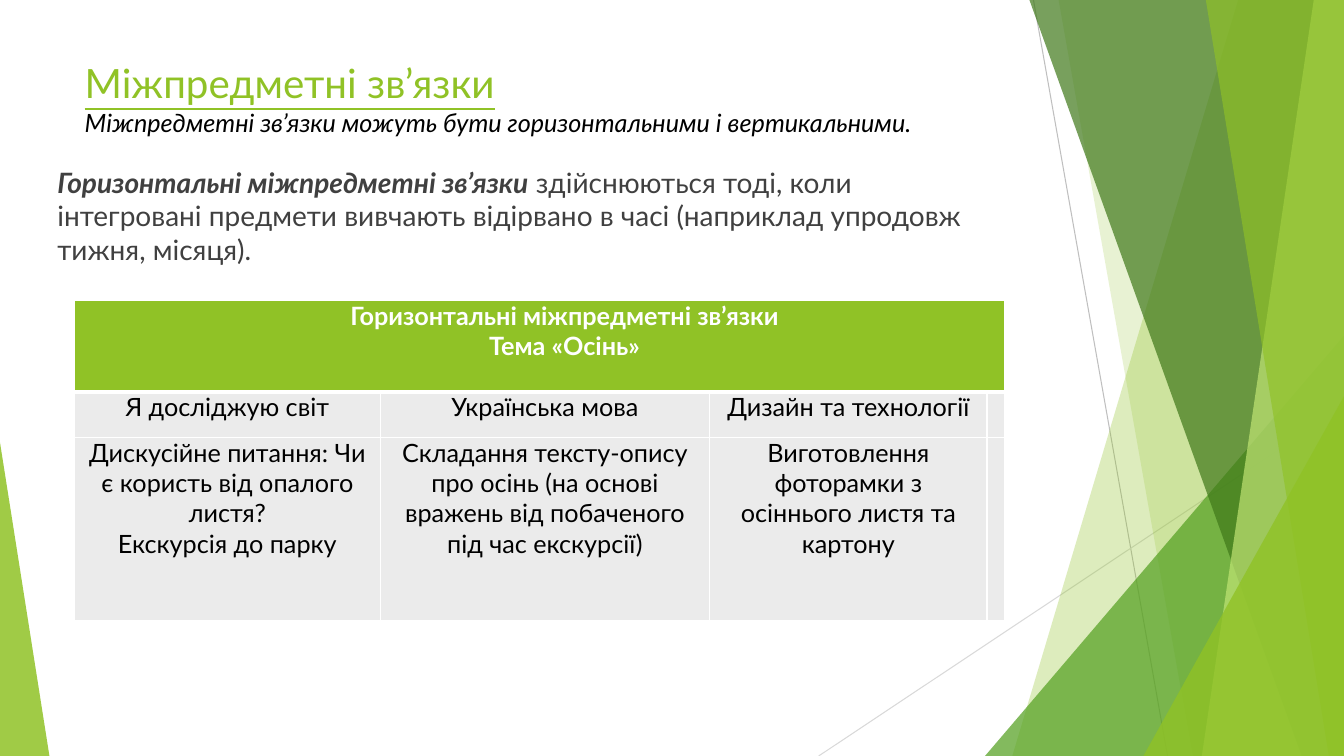
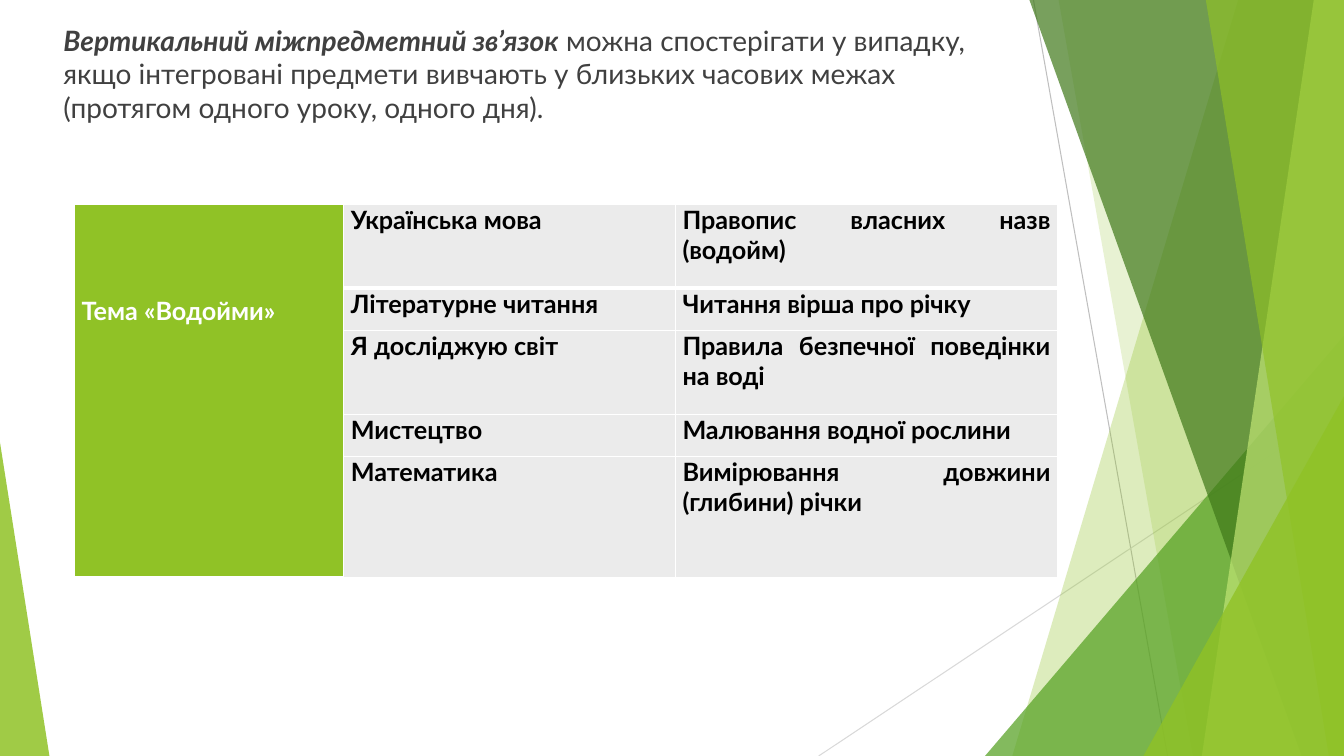
import dataclasses

import pptx
import pptx.dml.color
import pptx.enum.shapes
import pptx.enum.text
import pptx.oxml
import pptx.oxml.ns
import pptx.util

Inches = pptx.util.Inches
Pt = pptx.util.Pt
Align = pptx.enum.text.PP_ALIGN
qn = pptx.oxml.ns.qn


@dataclasses.dataclass(frozen=True)
class Theme:
    font: str = "Lato"
    lime: str = "90C226"
    green: str = "54A021"
    dark: str = "3F7819"
    pale: str = "C0E474"
    white: str = "FFFFFF"
    black: str = "000000"
    ink: str = "404040"
    cell: str = "EBEBEB"
    rule: str = "BFBFBF"
    faint: str = "D9D9D9"
    head: float = 28.8
    body: float = 20
    small: float = 18
    thin: float = 1
    thick: float = 3


class Deck:
    def __init__(self, theme):
        self.theme = theme
        self.file = pptx.Presentation()
        self.file.slide_width = Inches(13.33)
        self.file.slide_height = Inches(7.5)
        self.slide = None

    def start(self, titled):
        layout = self.file.slide_layouts[5 if titled else 6]
        self.slide = self.file.slides.add_slide(layout)
        self.decor()

    def color(self, code):
        return pptx.dml.color.RGBColor.from_string(code)

    def paint(self, shape, code, alpha):
        shape.shadow.inherit = False
        shape.fill.solid()
        shape.fill.fore_color.rgb = self.color(code)
        shape.line.fill.background()
        tint = shape.element.spPr.find(qn("a:solidFill")).find(qn("a:srgbClr"))
        tint.append(pptx.oxml.parse_xml(
            f'<a:alpha {pptx.oxml.ns.nsdecls("a")} val="{alpha * 1000}"/>'))

    def line(self, x1, y1, x2, y2, code):
        line = self.slide.shapes.add_connector(
            pptx.enum.shapes.MSO_CONNECTOR.STRAIGHT,
            Inches(x1), Inches(y1), Inches(x2), Inches(y2))
        line.line.color.rgb = self.color(code)
        line.line.width = Pt(0.75)
        line.element.spPr.append(pptx.oxml.parse_xml(
            f'<a:effectLst {pptx.oxml.ns.nsdecls("a")}/>'))

    def band(self, top, base, code, alpha):
        points = [(13.33, 0), (13.33, 7.5), (base, 7.5)]
        form = self.slide.shapes.build_freeform(Inches(top), Inches(0))
        form.add_line_segments([(Inches(x), Inches(y)) for x, y in points])
        self.paint(form.convert_to_shape(), code, alpha)

    def wedge(self, left, top, width, peak, code, alpha):
        shape = self.slide.shapes.add_shape(
            pptx.enum.shapes.MSO_SHAPE.ISOSCELES_TRIANGLE,
            Inches(left), Inches(top), Inches(width), Inches(7.5 - top))
        shape.adjustments[0] = peak
        self.paint(shape, code, alpha)

    def decor(self):
        t = self.theme
        self.line(10.25, 0, 11.58, 7.5, t.rule)
        self.line(13.33, 4.03, 8.12, 7.5, t.faint)
        self.band(12.28, 10.04, t.lime, 30)
        self.band(10.5, 11.83, t.lime, 20)
        self.wedge(9.77, 3.33, 3.56, 1, t.green, 72)
        self.band(10.21, 12.91, t.dark, 70)
        self.band(13.03, 11.92, t.pale, 70)
        self.band(11.96, 13.18, t.lime, 65)
        self.wedge(11.34, 3.93, 1.99, 1, t.lime, 80)
        self.wedge(0, 4.39, 0.49, 0, t.lime, 85)

    def run(self, para, text, size, code, bold=False, slant=False, under=False):
        run = para.add_run()
        run.text = text
        font = run.font
        font.name = self.theme.font
        font.size = Pt(size)
        font.bold = bold
        font.italic = slant
        font.underline = under
        font.color.rgb = self.color(code)

    def frame(self, shape):
        frame = shape.text_frame
        frame.word_wrap = True
        frame.auto_size = pptx.enum.text.MSO_AUTO_SIZE.NONE
        frame.vertical_anchor = pptx.enum.text.MSO_ANCHOR.TOP
        para = frame.paragraphs[0]
        para.alignment = Align.LEFT
        return para

    def title(self, text, sub):
        t = self.theme
        shape = self.slide.shapes.title
        shape.left, shape.top = Inches(0.74), Inches(0.53)
        shape.width, shape.height = Inches(9.4), Inches(0.97)
        para = self.frame(shape)
        self.run(para, text, t.head, t.lime, under=True)
        para.add_line_break()
        self.run(para, sub, t.small, t.black, slant=True)

    def body(self, left, top, term, rest):
        t = self.theme
        box = self.slide.shapes.add_textbox(
            Inches(left), Inches(top), Inches(9.4), Inches(1.12))
        para = self.frame(box)
        self.run(para, term, t.body, t.ink, bold=True, slant=True)
        self.run(para, rest, t.body, t.ink)

    def edge(self, cell, side, width):
        cell._tc.get_or_add_tcPr().append(pptx.oxml.parse_xml(
            f'<a:ln{side} {pptx.oxml.ns.nsdecls("a")} w="{Pt(width)}">'
            f'<a:solidFill><a:srgbClr val="{self.theme.white}"/></a:solidFill>'
            f'</a:ln{side}>'))

    def cell(self, cell, lines, row, head, bold, align):
        t = self.theme
        cell.margin_left = cell.margin_right = Inches(0.07)
        cell.margin_top = cell.margin_bottom = 0
        self.edge(cell, "L", t.thin)
        self.edge(cell, "R", t.thin)
        if row == 0:
            self.edge(cell, "T", t.thin)
        self.edge(cell, "B", t.thick if row == 0 else t.thin)
        cell.fill.solid()
        cell.fill.fore_color.rgb = self.color(t.lime if head else t.cell)
        for i, text in enumerate(lines):
            frame = cell.text_frame
            para = frame.add_paragraph() if i else frame.paragraphs[0]
            para.alignment = align
            self.run(para, text, t.small, t.white if head else t.black,
                     bold=bold or head)

    def table(self, top, cols, rows, data, span, bold, align):
        grid = self.slide.shapes.add_table(
            len(rows), len(cols), Inches(0.74), Inches(top),
            Inches(sum(cols)), Inches(sum(rows))).table
        grid.first_row = grid.horz_banding = False
        for col, width in zip(grid.columns, cols):
            col.width = Inches(width)
        for row, height in zip(grid.rows, rows):
            row.height = Inches(height)
        for r, line in enumerate(data):
            for c, text in enumerate(line):
                head = r < span[0] and c < span[1]
                parts = text.split("\n") if text else []
                self.cell(grid.cell(r, c), parts, r, head, bold, align)
        first = grid.cell(0, 0)
        first.merge(grid.cell(span[0] - 1, span[1] - 1))
        return first


def main():
    deck = Deck(Theme())

    deck.start(True)
    deck.title("Міжпредметні зв’язки",
               "Міжпредметні зв’язки можуть бути горизонтальними і вертикальними.")
    deck.body(0.47, 1.59, "Горизонтальні міжпредметні зв’язки",
              " здійснюються тоді, коли інтегровані предмети вивчають відірвано"
              " в часі (наприклад упродовж тижня, місяця).")
    head = deck.table(2.98, [3.03, 3.27, 2.75, 0.16], [0.91, 0.45, 1.82], [
        ["Горизонтальні міжпредметні зв’язки\nТема «Осінь»", "", "", ""],
        ["Я досліджую світ", "Українська мова", "Дизайн та технології", ""],
        ["Дискусійне питання: Чи є користь від опалого листя?\nЕкскурсія до парку",
         "Складання тексту-опису про осінь (на основі вражень від побаченого"
         " під час екскурсії)",
         "Виготовлення фоторамки з осіннього листя та картону", ""],
    ], (1, 4), False, Align.CENTER)
    for para in head.text_frame.paragraphs:
        para._p.get_or_add_pPr().set("indent", str(Inches(0.49)))

    deck.start(False)
    deck.body(0.53, 0.18, "Вертикальний міжпредметний зв’язок",
              " можна спостерігати у випадку, якщо інтегровані предмети вивчають"
              " у близьких часових межах (протягом одного уроку, одного дня).")
    head = deck.table(2.03, [2.67, 3.29, 3.79], [0.83, 0.42, 0.83, 0.42, 1.2], [
        ["Тема «Водойми»", "Українська мова", "Правопис власних назв (водойм)"],
        ["", "Літературне читання", "Читання вірша про річку"],
        ["", "Я досліджую світ", "Правила безпечної поведінки на воді"],
        ["", "Мистецтво", "Малювання водної рослини"],
        ["", "Математика", "Вимірювання довжини (глибини) річки"],
    ], (5, 1), True, Align.JUSTIFY)
    head.margin_top = Inches(0.9)

    deck.file.save("out.pptx")


if __name__ == "__main__":
    main()
